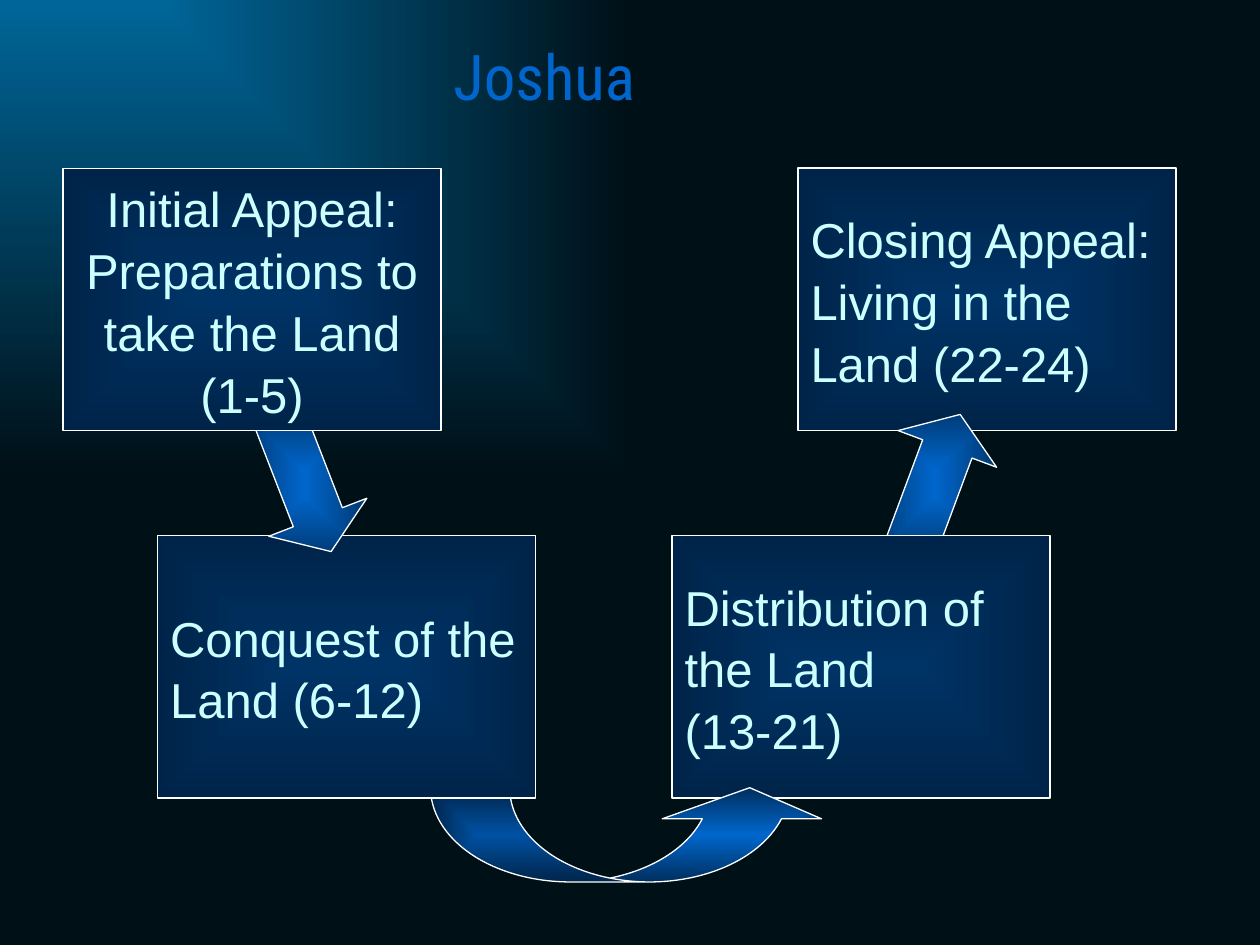
from lxml import etree
from pptx import Presentation
from pptx.dml.color import RGBColor
from pptx.enum.shapes import MSO_SHAPE
from pptx.enum.text import MSO_ANCHOR, MSO_AUTO_SIZE, PP_ALIGN
from pptx.oxml.ns import qn
from pptx.util import Cm, Pt

RECT, DOWN, CURVED_UP = (MSO_SHAPE.RECTANGLE, MSO_SHAPE.DOWN_ARROW,
                         MSO_SHAPE.CURVED_UP_ARROW)
TOP, MIDDLE = MSO_ANCHOR.TOP, MSO_ANCHOR.MIDDLE
LEFT, CENTER = PP_ALIGN.LEFT, PP_ALIGN.CENTER
NO_AUTOSIZE = MSO_AUTO_SIZE.NONE

TEAL = RGBColor(0x00, 0x66, 0x99)
NIGHT = RGBColor(0x00, 0x10, 0x17)
NAVY = RGBColor(0x00, 0x33, 0x66)
DARK_NAVY = RGBColor(0x00, 0x24, 0x49)
BLUE = RGBColor(0x00, 0x66, 0xCC)
DARK_BLUE = RGBColor(0x00, 0x2F, 0x5E)
WHITE = RGBColor(0xFF, 0xFF, 0xFF)
PALE = RGBColor(0xCC, 0xFF, 0xFF)

BOX_W, BOX_H = 7.62, 5.29
UPPER, LOWER = 3.39, 10.8
ARROW_W, ARROW_H = 2.12, 2.96
ARROW_TOP = (UPPER + BOX_H + LOWER - ARROW_H) / 2


def fill_path(fill, parent, inner, outer, kind="rect", focus=(50, 50, 50, 50)):
    """Fill with a gradient that spreads from the focus (l, t, r, b in %)."""
    fill.gradient()
    for stop, color in zip(fill.gradient_stops, (inner, outer)):
        stop.color.rgb = color
    grad = parent.find(".//" + qn("a:gradFill"))
    lin = grad.find(qn("a:lin"))
    path = etree.Element(qn("a:path"), {"path": kind})
    rect = etree.SubElement(path, qn("a:fillToRect"))
    for side, percent in zip("ltrb", focus):
        rect.set(side, str(percent * 1000))
    grad.replace(lin, path)


def write(shape, text, size=28, font="Arial", color=PALE, align=LEFT,
          anchor=MIDDLE, spacing=1.05):
    tf = shape.text_frame
    tf.word_wrap = True
    tf.auto_size = NO_AUTOSIZE
    tf.vertical_anchor = anchor
    tf.text = text
    p = tf.paragraphs[0]
    p.alignment = align
    p.line_spacing = spacing
    for r in p.runs:
        r.font.size = Pt(size)
        r.font.name = font
        r.font.color.rgb = color


def style(sp, inner, outer, kind):
    fill_path(sp.fill, sp._element.spPr, inner, outer, kind)
    sp.line.color.rgb = WHITE
    sp.line.width = Pt(0.75)


def add_box(slide, left, top, text):
    sp = slide.shapes.add_shape(RECT, Cm(left), Cm(top), Cm(BOX_W), Cm(BOX_H))
    sp.shadow.inherit = False
    style(sp, NAVY, DARK_NAVY, "shape")
    write(sp, text)


def add_title_box(slide, left, top, text):
    sp = slide.shapes.title
    sp.left, sp.top, sp.width, sp.height = map(Cm, (left, top, BOX_W, BOX_H))
    style(sp, NAVY, DARK_NAVY, "shape")
    write(sp, text, align=CENTER)
    slide.shapes._spTree.append(sp._element)  # bring to front


def add_arrow(slide, preset, left, top, width, height, adjustments, rotation=0):
    sp = slide.shapes.add_shape(preset, Cm(left), Cm(top), Cm(width), Cm(height))
    sp.shadow.inherit = False
    for i, value in enumerate(adjustments):
        sp.adjustments[i] = value
    sp.rotation = rotation
    style(sp, BLUE, DARK_BLUE, "rect")


def add_step_arrow(slide, left, rotation):
    add_arrow(slide, DOWN, left, ARROW_TOP, ARROW_W, ARROW_H, (0.5, 0.35), rotation)


def add_heading(slide, left, top, width, height, text):
    sp = slide.shapes.add_textbox(Cm(left), Cm(top), Cm(width), Cm(height))
    write(sp, text, size=36, font="Roboto Condensed", color=BLUE, anchor=TOP,
          spacing=1)


def main():
    prs = Presentation()
    prs.slide_width, prs.slide_height = Cm(25.4), Cm(19.05)
    slide = prs.slides.add_slide(prs.slide_layouts[5])
    fill_path(slide.background.fill, slide._element, TEAL, NIGHT,
              focus=(0, 0, 100, 100))

    # Back to front: each arrow starts behind one box and points onto the next
    add_box(slide, 16.09, UPPER, "Closing Appeal:\vLiving in the Land (22-24)")
    add_step_arrow(slide, 17.78, 200.4)
    add_box(slide, 13.55, LOWER, "Distribution of the Land\v(13-21)")
    add_arrow(slide, CURVED_UP, 8.68, 15.88, 8.04, 1.9, (0.84, 1.69, 0.33))
    add_box(slide, 3.18, LOWER, "Conquest of the Land (6-12)")
    add_step_arrow(slide, 5.08, 338.8)
    add_title_box(slide, 1.27, UPPER,
                  "Initial Appeal:\vPreparations to take the Land (1-5)")
    add_heading(slide, 8.89, 0.64, 7.41, 2.12, "Joshua")
    prs.save("out.pptx")


if __name__ == "__main__":
    main()
